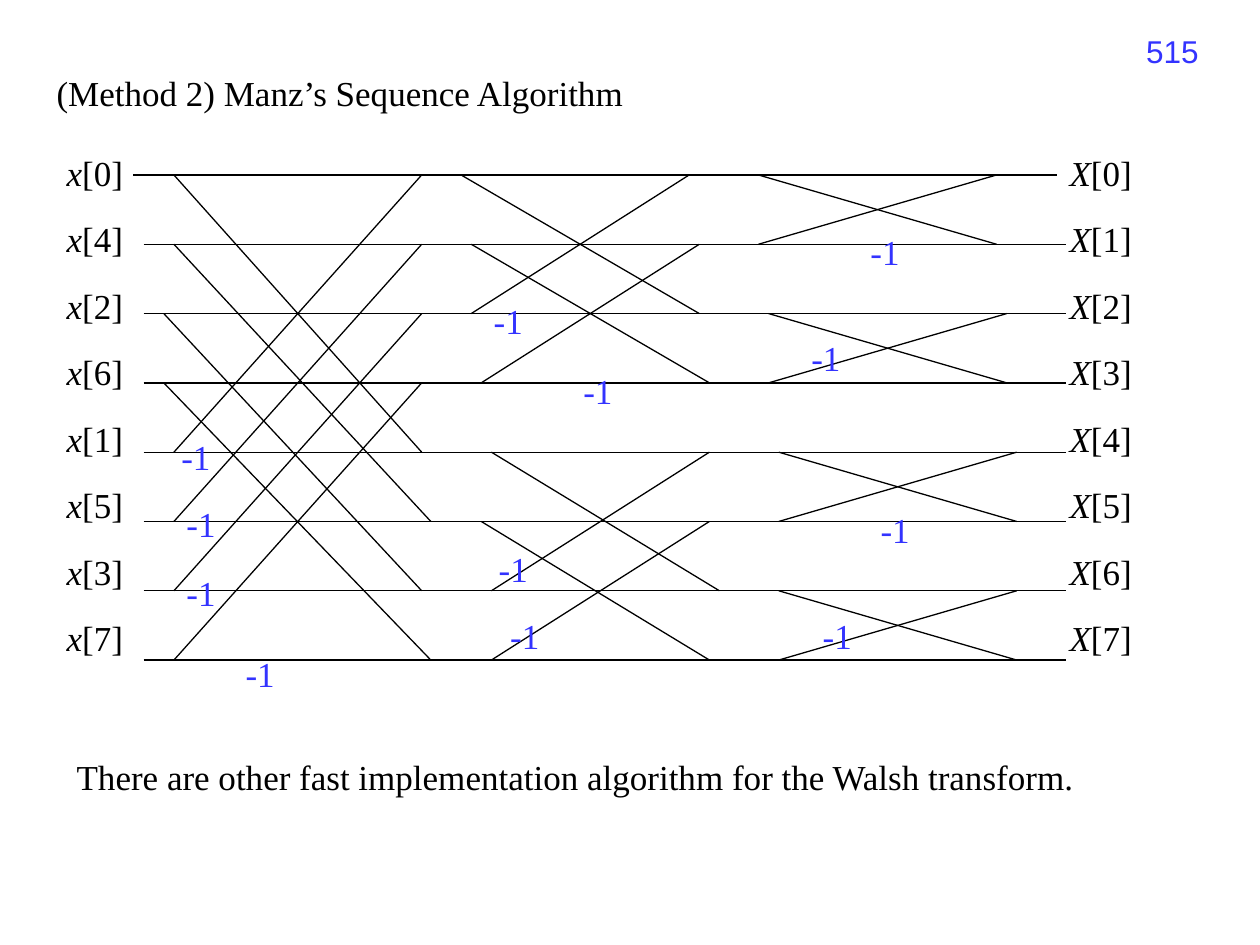
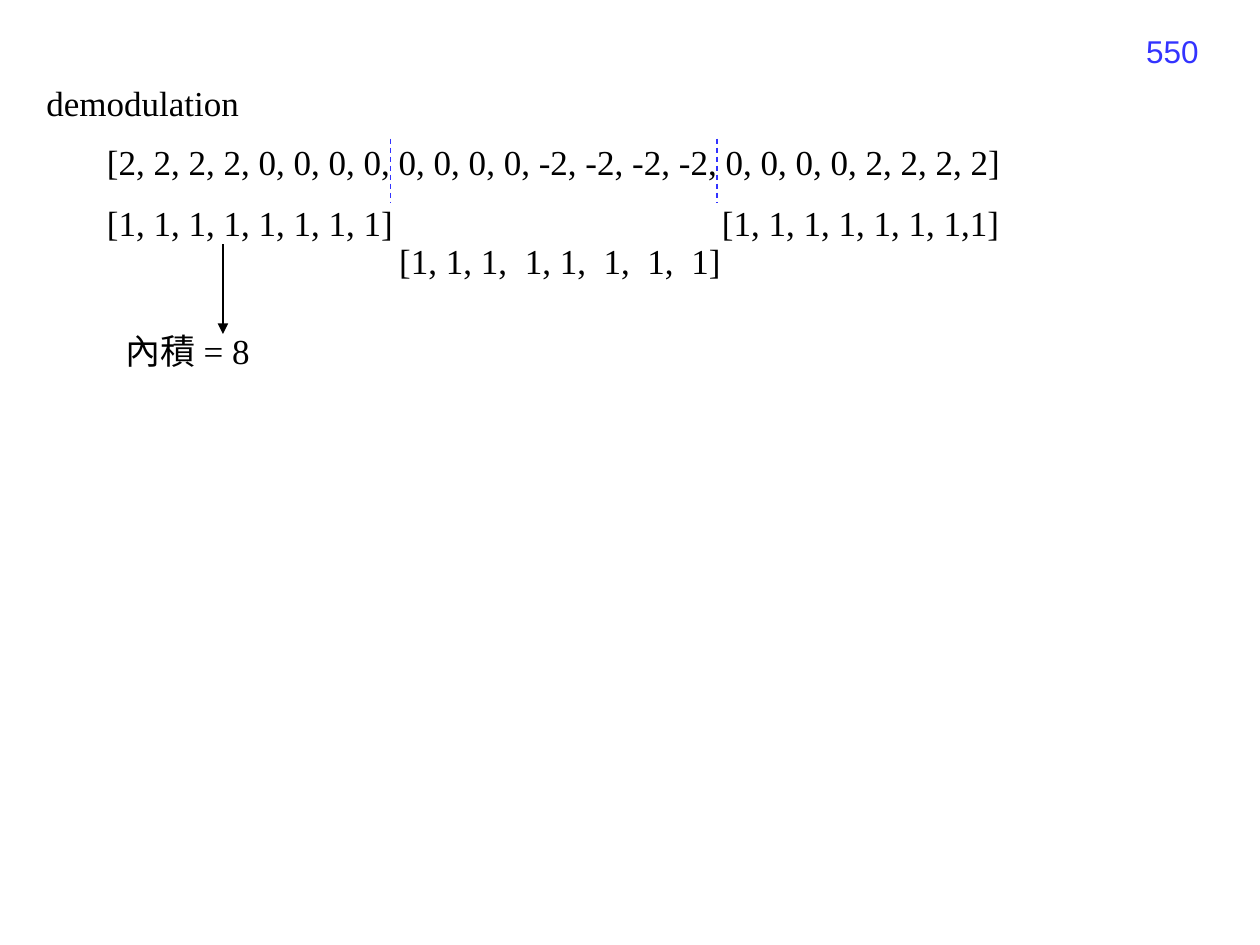
from dataclasses import dataclass

from lxml import etree
from pptx import Presentation
from pptx import util as u
from pptx.dml.color import RGBColor
from pptx.enum import dml, shapes, text
from pptx.oxml import ns
from pptx.shapes.connector import Connector
from pptx.slide import Slide
from pptx.text.text import TextFrame, _Paragraph

BLACK = RGBColor(0x00, 0x00, 0x00)
BLUE = RGBColor(0x33, 0x33, 0xFF)
SERIF = "Times New Roman"
SANS = "Arial"
BODY_SIZE = 20
LINE_HEIGHT = 31

FIRST_ROW = 100
ROW_STEP = 39.6
ROW_COUNT = 8
LABEL_GAP = 14
WIDE_GAP = 5
SIGN_WIDTH = 34


@dataclass(frozen=True)
class Butterfly:
    """A crossing pair: x range of the falling and rising line, and its sign's corner."""
    row: int
    fall: tuple[float, float]
    rise: tuple[float, float]
    sign: tuple[float, float]


@dataclass(frozen=True)
class Stage:
    reach: int
    butterflies: tuple[Butterfly, ...]


@dataclass(frozen=True)
class Label:
    words: str
    left: float
    top: float
    width: float


STAGES = (
    Stage(4, (
        Butterfly(0, (99.4, 241), (99.4, 241), (96.5, 245.5)),
        Butterfly(1, (99.4, 246.2), (99.4, 241), (99.4, 283.7)),
        Butterfly(2, (93.6, 241), (99.4, 241), (99.4, 323.3)),
        Butterfly(3, (93.6, 246.2), (99.4, 241), (133.2, 369.4)),
    )),
    Stage(2, (
        Butterfly(0, (263.5, 399.6), (269.3, 393.8), (275, 167.8)),
        Butterfly(1, (269.3, 405.4), (275, 399.6), (326.2, 207.4)),
        Butterfly(4, (280.8, 411.1), (280.8, 405.4), (277.9, 309.6)),
        Butterfly(5, (275, 405.4), (280.8, 405.4), (284.4, 347.8)),
    )),
    Stage(1, (
        Butterfly(0, (433.4, 569.5), (433.4, 569.5), (490.3, 128.2)),
        Butterfly(2, (439.2, 575.3), (439.2, 575.3), (456.5, 188.6)),
        Butterfly(4, (445, 581), (445, 581), (496.1, 287.3)),
        Butterfly(6, (445, 581), (445, 581), (463, 347.8)),
    )),
)
INPUT_ORDER = (0, 4, 2, 6, 1, 5, 3, 7)

DEMODULATION_LABELS = (
    Label("[2, 2, 2, 2, 0, 0, 0, 0, 0, 0, 0, 0, -2, -2, -2, -2, 0, 0, 0, 0, 2, 2, 2, 2]",
          54, 77, 540),
    Label("[1, 1, 1, 1, 1, 1, 1, 1]", 54, 111.6, 187),
    Label("[1, 1, 1, 1, 1, 1, 1,1]", 405.4, 111.6, 187),
    Label("內積 = 8", 64.8, 185, 136),
)
SPREAD_CODE = ("[1, 1, 1,", "1, 1,", "1,", "1,", "1]")


def row_y(row: int) -> float:
    return FIRST_ROW + ROW_STEP * row


def add_frame(page: Slide, left: float, top: float, width: float,
              height: float = LINE_HEIGHT) -> TextFrame:
    box = page.shapes.add_textbox(u.Pt(left), u.Pt(top), u.Pt(width), u.Pt(height))
    box.text_frame.word_wrap = True
    return box.text_frame


def add_span(para: _Paragraph, words: str, color: RGBColor = BLACK, italic: bool = False,
             font: str = SERIF, size: float = BODY_SIZE, tracking: float = 0) -> None:
    span = para.add_run()
    span.text = words
    span.font.name = font
    span.font.size = u.Pt(size)
    span.font.italic = italic
    span.font.color.rgb = color
    if tracking:
        span.font._element.set("spc", str(round(tracking * 100)))


def add_label(page: Slide, label: Label, color: RGBColor = BLACK) -> None:
    frame = add_frame(page, label.left, label.top, label.width)
    add_span(frame.paragraphs[0], label.words, color)


def add_line(page: Slide, x1: float, y1: float, x2: float, y2: float,
             color: RGBColor = BLACK) -> Connector:
    line = page.shapes.add_connector(shapes.MSO_CONNECTOR.STRAIGHT,
                                     u.Pt(x1), u.Pt(y1), u.Pt(x2), u.Pt(y2))
    line.line.color.rgb = color
    line.line.width = u.Pt(0.75)
    etree.SubElement(line._element.spPr, ns.qn("a:effectLst"))
    return line


def add_arrow(page: Slide, x1: float, y1: float, x2: float, y2: float) -> None:
    arrow = add_line(page, x1, y1, x2, y2)
    etree.SubElement(arrow.line._get_or_add_ln(), ns.qn("a:tailEnd"), type="triangle")


def add_page(deck, number: int, title: Label) -> Slide:
    page = deck.slides.add_slide(deck.slide_layouts[6])
    para = add_frame(page, 524, 15, 168, 37).paragraphs[0]
    para.alignment = text.PP_ALIGN.RIGHT
    add_span(para, str(number), BLUE, font=SANS, size=18)
    add_label(page, title)
    return page


def add_signal_names(page: Slide, letter: str, indices, left: float) -> None:
    frame = add_frame(page, left, 82.8, 51, 309)
    for position, index in enumerate(indices):
        para = frame.add_paragraph() if position else frame.paragraphs[0]
        if position:
            para.space_before = u.Pt(LABEL_GAP)
        add_span(para, letter, italic=True)
        add_span(para, f"[{index}]")


def add_stage(page: Slide, stage: Stage) -> None:
    for pair in stage.butterflies:
        upper, lower = row_y(pair.row), row_y(pair.row + stage.reach)
        add_line(page, pair.fall[0], upper, pair.fall[1], lower)
        add_line(page, pair.rise[0], lower, pair.rise[1], upper)
        add_label(page, Label("-1", *pair.sign, SIGN_WIDTH), BLUE)


def build_sequence_page(deck) -> None:
    title = Label("(Method 2) Manz’s Sequence Algorithm", 25.2, 37.4, 345)
    page = add_page(deck, 515, title)
    for row in range(ROW_COUNT):
        left, right = (82.1, 609.1) if row else (76.3, 604.1)
        add_line(page, left, row_y(row), right, row_y(row))
    for stage in STAGES:
        add_stage(page, stage)
    add_signal_names(page, "x", INPUT_ORDER, 31)
    add_signal_names(page, "X", range(ROW_COUNT), 604.1)
    add_label(page, Label(
        "There are other fast implementation algorithm for the Walsh transform.",
        36.7, 428.4, 596))


def build_demodulation_page(deck) -> None:
    page = add_page(deck, 550, Label("demodulation", 19.4, 43.2, 233))
    for label in DEMODULATION_LABELS:
        add_label(page, label)
    para = add_frame(page, 221, 133.2, 206).paragraphs[0]
    for position, group in enumerate(SPREAD_CODE):
        if position:
            add_span(para, " ", tracking=WIDE_GAP)
        add_span(para, group)
    add_arrow(page, 127.4, 139.7, 127.4, 190.8)
    for x in (223.2, 409.7):
        divider = add_line(page, x, 79.2, x, 116, BLUE)
        divider.line.dash_style = dml.MSO_LINE.DASH


def main() -> None:
    deck = Presentation()
    deck.slide_width, deck.slide_height = u.Pt(720), u.Pt(540)
    build_sequence_page(deck)
    build_demodulation_page(deck)
    deck.save("out.pptx")


if __name__ == "__main__":
    main()
